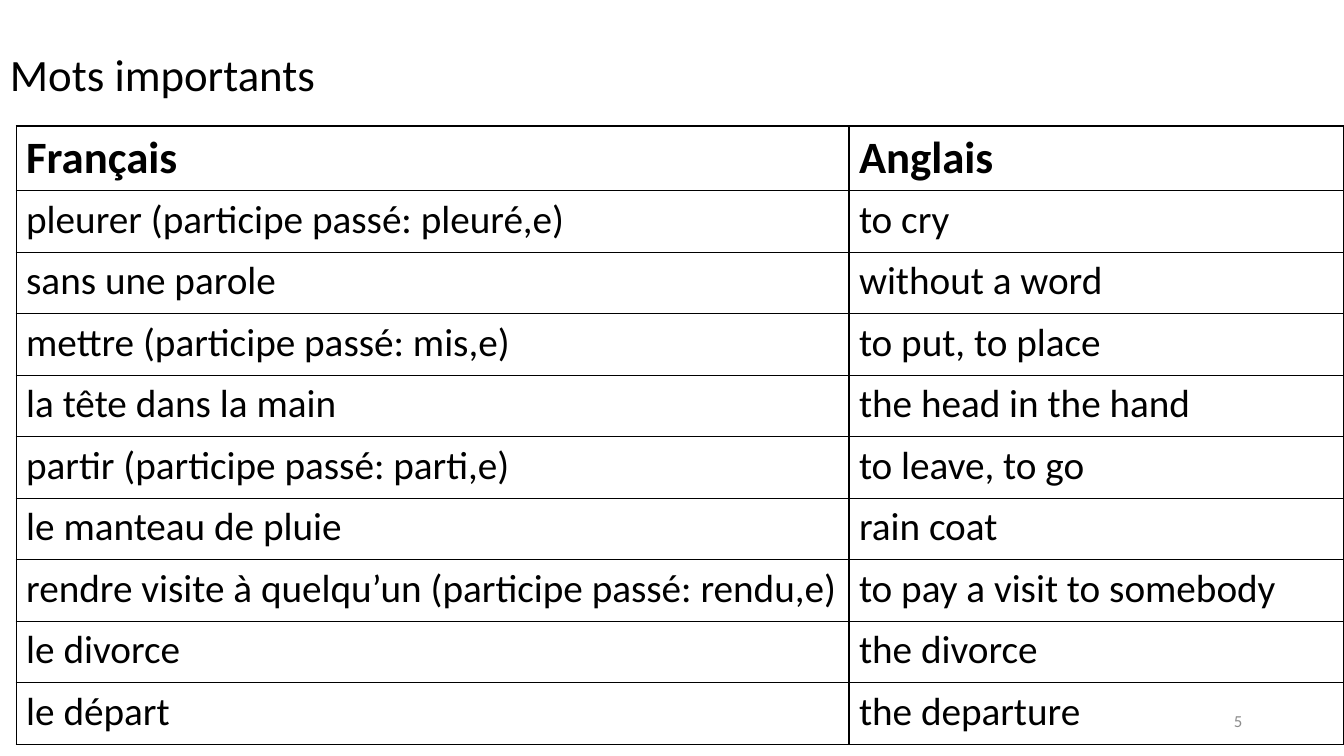
from typing import NamedTuple

from lxml import etree
from pptx import Presentation
from pptx import util as u
from pptx.dml.color import RGBColor
from pptx.enum import text
from pptx.oxml import ns

BLACK = RGBColor(0x00, 0x00, 0x00)
GREY = RGBColor(0x8C, 0x8C, 0x8C)
FONT = "Calibri"
ROW_HEIGHT = 0.61
COLUMN_WIDTHS = (8.26, 4.91)


class Entry(NamedTuple):
    french: str
    english: str


class Label(NamedTuple):
    words: str
    left: float
    top: float
    width: float
    height: float
    size: int
    color: RGBColor
    align: text.PP_ALIGN
    anchor: text.MSO_ANCHOR


VOCABULARY = [
    Entry("Français", "Anglais"),
    Entry("pleurer (participe passé: pleuré,e)", "to cry"),
    Entry("sans une parole", "without a word"),
    Entry("mettre (participe passé: mis,e)", "to put, to place"),
    Entry("la tête dans la main", "the head in the hand"),
    Entry("partir (participe passé: parti,e)", "to leave, to go"),
    Entry("le manteau de pluie", "rain coat"),
    Entry("rendre visite à quelqu’un (participe passé: rendu,e)",
          "to pay a visit to somebody"),
    Entry("le divorce", "the divorce"),
    Entry("le départ", "the departure"),
]

LABELS = [
    Label("Mots importants", 0, 0.41, 9.78, 0.64, 32, BLACK,
          text.PP_ALIGN.LEFT, text.MSO_ANCHOR.TOP),
    Label("5", 9.42, 6.95, 3, 0.4, 12, GREY,
          text.PP_ALIGN.RIGHT, text.MSO_ANCHOR.MIDDLE),
]


def set_font(p, size: int, color: RGBColor, bold: bool = False) -> None:
    p.font.name = FONT
    p.font.size = u.Pt(size)
    p.font.bold = bold
    p.font.color.rgb = color


def add_borders(cell) -> None:
    """Put a thin black line on all four sides of a cell."""
    props = cell._tc.get_or_add_tcPr()
    for i, side in enumerate(("lnL", "lnR", "lnT", "lnB")):
        line = etree.Element(ns.qn(f"a:{side}"), w=str(u.Pt(1)))
        fill = etree.SubElement(line, ns.qn("a:solidFill"))
        etree.SubElement(fill, ns.qn("a:srgbClr"), val=str(BLACK))
        props.insert(i, line)


def add_vocabulary(s, entries: list[Entry]) -> None:
    frame = s.shapes.add_table(
        len(entries), len(COLUMN_WIDTHS), u.Inches(0.16), u.Inches(1.25),
        u.Inches(sum(COLUMN_WIDTHS)), u.Inches(ROW_HEIGHT * len(entries)))
    table = frame.table
    table.horz_banding = False
    for column, width in zip(table.columns, COLUMN_WIDTHS):
        column.width = u.Inches(width)
    for i, entry in enumerate(entries):
        table.rows[i].height = u.Inches(ROW_HEIGHT)
        header = i == 0
        for j, words in enumerate(entry):
            cell = table.cell(i, j)
            cell.text = words
            cell.fill.background()
            add_borders(cell)
            set_font(cell.text_frame.paragraphs[0], 32 if header else 28,
                     BLACK, header)


def add_label(s, label: Label) -> None:
    sp = s.shapes.add_textbox(u.Inches(label.left), u.Inches(label.top),
                              u.Inches(label.width), u.Inches(label.height))
    tf = sp.text_frame
    tf.word_wrap = True
    tf.vertical_anchor = label.anchor
    p = tf.paragraphs[0]
    p.text = label.words
    p.alignment = label.align
    set_font(p, label.size, label.color)


def main() -> None:
    prs = Presentation()
    prs.slide_width, prs.slide_height = u.Inches(13.33), u.Inches(7.5)
    s = prs.slides.add_slide(prs.slide_layouts[6])

    # Word list
    add_vocabulary(s, VOCABULARY)

    # Title and page number
    for label in LABELS:
        add_label(s, label)

    prs.save("out.pptx")


if __name__ == "__main__":
    main()
